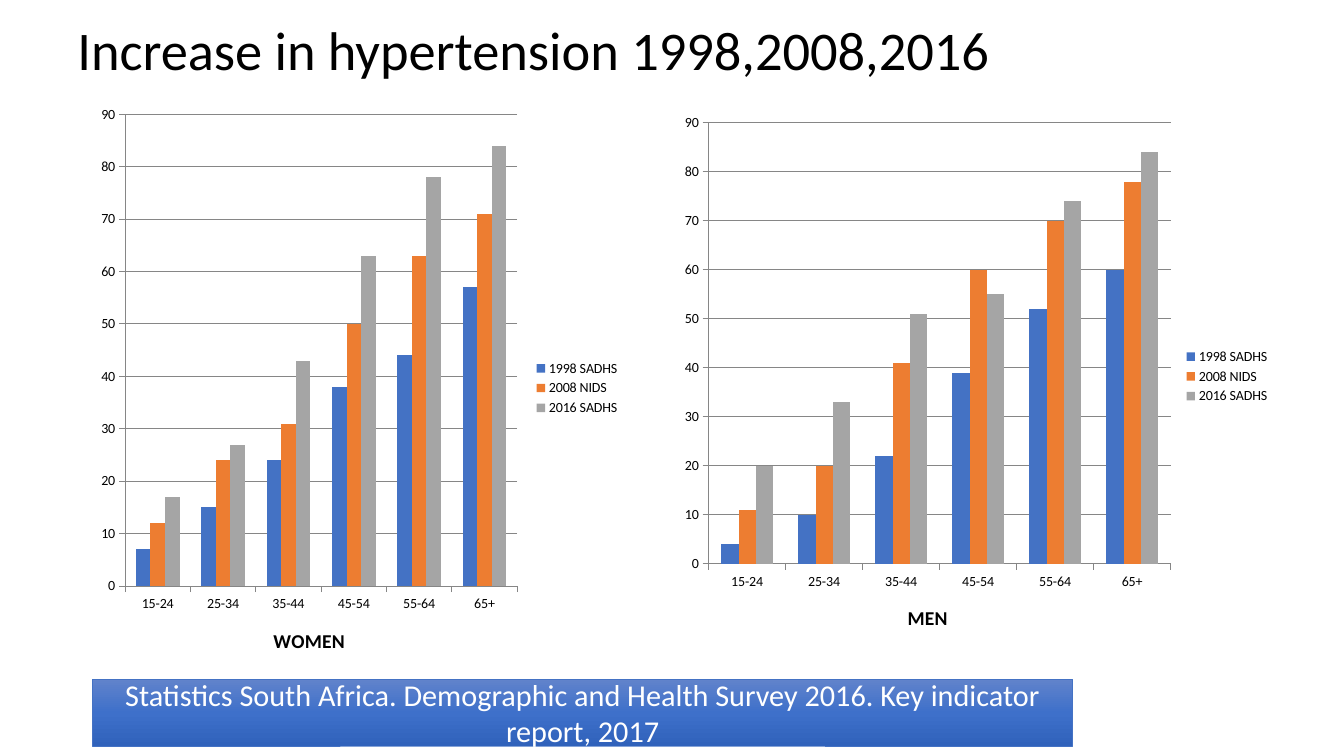
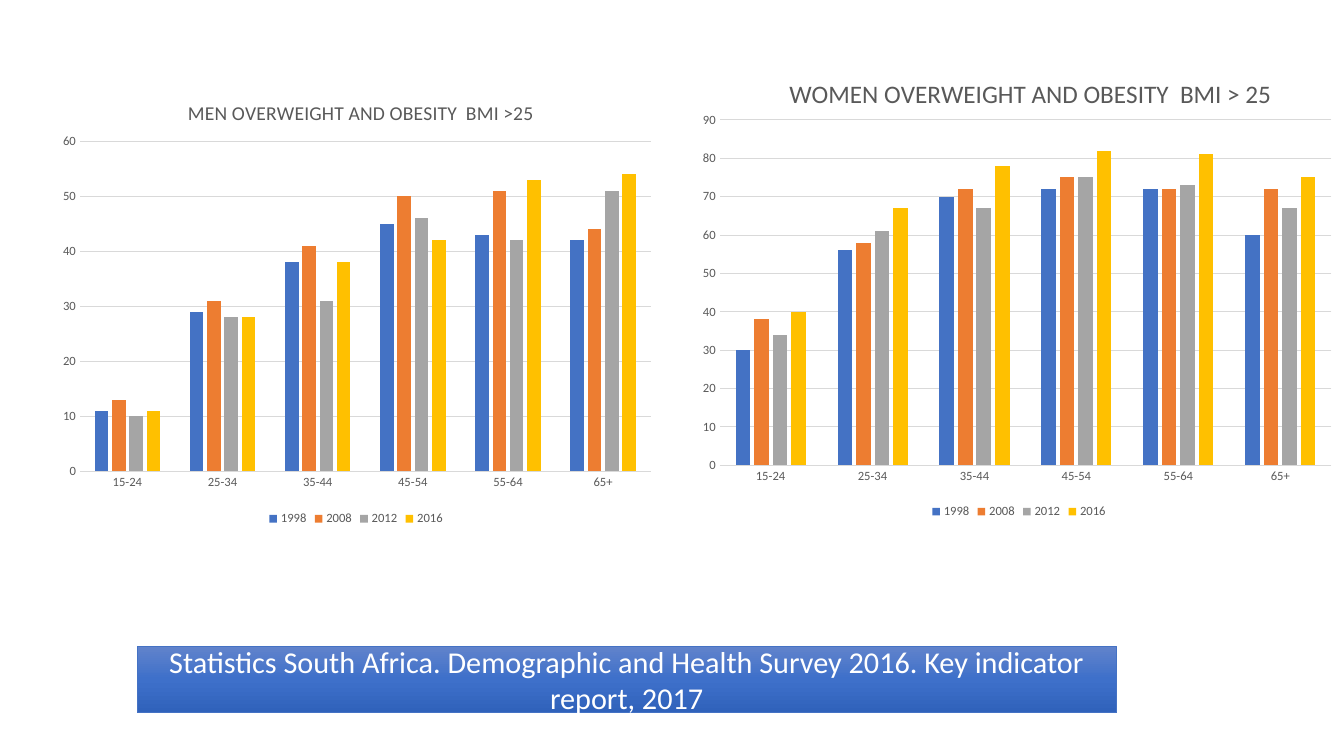
import copy

import pptx
import pptx.chart.data
import pptx.dml.color
import pptx.enum.chart
import pptx.enum.shapes
import pptx.enum.text
import pptx.oxml
import pptx.oxml.ns
import pptx.util
from pptx.util import Cm

FONT = "Calibri"
SERIES_COLOURS = ["4472C4", "ED7D31", "A5A5A5", "FFC000"]
BANNER_STOPS = [(0, "6183CB"), (0.5, "3E70CA"), (1, "3062BB")]
BANNER_SIZE = (24.69, 1.68)
AGE_GROUPS = ["15-24", "25-34", "35-44", "45-54", "55-64", "65+"]
SOURCE = ("Statistics South Africa. Demographic and Health Survey 2016. "
          "Key indicator report, 2017")
TICK = pptx.enum.chart.XL_TICK_MARK
LEGEND = pptx.enum.chart.XL_LEGEND_POSITION

HYPERTENSION_STYLE = {
    "names": ["1998 SADHS", "2008 NIDS", "2016 SADHS"],
    "size": 10, "text": "000000", "line": "868686", "tick": TICK.OUTSIDE,
    "legend": LEGEND.RIGHT, "gap": 150, "overlap": 0, "value_line": True,
}
OBESITY_STYLE = {
    "names": ["1998", "2008", "2012", "2016"],
    "size": 9, "text": "595959", "line": "D9D9D9", "tick": TICK.NONE,
    "legend": LEGEND.BOTTOM, "gap": 219, "overlap": -27, "value_line": False,
}

# Boxes are left, top, width, height in cm; plot and title places are
# fractions of the chart.
SLIDES = [
    {
        "title": "Increase in hypertension 1998,2008,2016",
        "banner_at": (2.34, 17.12),
        "style": HYPERTENSION_STYLE,
        "charts": [
            {"box": (2.34, 2.44, 13.54, 14.68), "axis_title": "WOMEN", "top": 90,
             "plot": {"x": 0.06, "y": 0.03, "w": 0.73, "h": 0.81},
             "values": [[7, 15, 24, 38, 44, 57],
                        [12, 24, 31, 50, 63, 71],
                        [17, 27, 43, 63, 78, 84]]},
            {"box": (16.94, 2.54, 15.32, 13.89), "axis_title": "MEN", "top": 90,
             "plot": {"x": 0.06, "y": 0.04, "w": 0.76, "h": 0.8},
             "values": [[4, 10, 22, 39, 52, 60],
                        [11, 20, 41, 60, 70, 78],
                        [20, 33, 51, 55, 74, 84]]},
        ],
    },
    {
        "banner_at": (3.45, 16.28),
        "style": OBESITY_STYLE,
        "charts": [
            {"box": (1.24, 1.96, 15.47, 11.4), "top": 60,
             "title": "MEN OVERWEIGHT AND OBESITY  BMI >25", "title_size": 14,
             "title_at": {"x": 0.22, "y": 0.04},
             "plot": {"x": 0.05, "y": 0.14, "w": 0.93, "h": 0.73},
             "values": [[11, 29, 38, 45, 43, 42],
                        [13, 31, 41, 50, 51, 44],
                        [10, 28, 31, 46, 42, 51],
                        [11, 28, 38, 42, 53, 54]]},
            {"box": (17.48, 1.09, 16.4, 12.09), "top": 90,
             "title": "WOMEN OVERWEIGHT AND OBESITY  BMI > 25", "title_size": 18,
             "title_at": {"x": 0.14, "y": 0.06},
             "plot": {"x": 0.04, "y": 0.16, "w": 0.94, "h": 0.72},
             "values": [[30, 56, 70, 72, 72, 60],
                        [38, 58, 72, 75, 72, 72],
                        [34, 61, 67, 75, 73, 67],
                        [40, 67, 78, 82, 81, 75]]},
        ],
    },
]


def colour(hex_text):
    return pptx.dml.color.RGBColor.from_string(hex_text)


def set_layout(element, index, place):
    """Give a chart title or plot area a fixed place inside its chart."""
    for old in element.findall(pptx.oxml.ns.qn("c:layout")):
        element.remove(old)
    target = '<c:layoutTarget val="inner"/>' if "w" in place else ""
    modes = "".join(f'<c:{key}Mode val="edge"/>' for key in place if key in "xy")
    values = "".join(f'<c:{key} val="{value}"/>' for key, value in place.items())
    element.insert(index, pptx.oxml.parse_xml(
        f'<c:layout {pptx.oxml.ns.nsdecls("c")}><c:manualLayout>'
        f"{target}{modes}{values}</c:manualLayout></c:layout>"))


deck = pptx.Presentation()
deck.slide_width = Cm(33.87)
deck.slide_height = Cm(19.05)

for content in SLIDES:
    slide = deck.slides.add_slide(deck.slide_layouts[6])
    style = content["style"]

    if "title" in content:
        title_box = slide.shapes.add_textbox(Cm(1.7), Cm(0.76), Cm(30.48), Cm(1.17))
        title_frame = title_box.text_frame
        title_frame.word_wrap = True
        title_frame.vertical_anchor = pptx.enum.text.MSO_ANCHOR.MIDDLE
        para = title_frame.paragraphs[0]
        para.text = content["title"]
        para.line_spacing = 0.9
        para.font.name = FONT
        para.font.size = pptx.util.Pt(38.9)
        para.font.color.rgb = colour("000000")

    for details in content["charts"]:
        data = pptx.chart.data.CategoryChartData()
        data.categories = AGE_GROUPS
        for name, values in zip(style["names"], details["values"]):
            data.add_series(name, values)
        chart = slide.shapes.add_chart(
            pptx.enum.chart.XL_CHART_TYPE.COLUMN_CLUSTERED,
            *[Cm(length) for length in details["box"]], data).chart
        chart.font.name = FONT
        chart.font.size = pptx.util.Pt(style["size"])
        chart.font.color.rgb = colour(style["text"])

        plot = chart.plots[0]
        plot.vary_by_categories = False
        plot.gap_width = style["gap"]
        plot.overlap = style["overlap"]
        for series, series_colour in zip(plot.series, SERIES_COLOURS):
            series.format.fill.solid()
            series.format.fill.fore_color.rgb = colour(series_colour)

        ages, percent = chart.category_axis, chart.value_axis
        percent.minimum_scale = 0
        percent.maximum_scale = details["top"]
        percent.major_unit = 10
        percent.has_major_gridlines = True
        for axis in (ages, percent):
            axis.major_tick_mark = style["tick"]
            axis.minor_tick_mark = TICK.NONE
        for line in (ages.format.line, percent.format.line,
                     percent.major_gridlines.format.line):
            line.width = pptx.util.Pt(0.75)
            line.color.rgb = colour(style["line"])
        if not style["value_line"]:
            percent.format.line.fill.background()

        chart.has_legend = True
        chart.legend.position = style["legend"]
        chart.legend.include_in_layout = False

        if "title" in details:
            chart.has_title = True
            heading = chart.chart_title
            heading_text, size, bold = details["title"], details["title_size"], False
        else:
            chart.has_title = False
            heading = ages.axis_title
            heading_text, size, bold = details["axis_title"], 14, True
        para = heading.text_frame.paragraphs[0]
        para.text = heading_text
        para.font.name = FONT
        para.font.size = pptx.util.Pt(size)
        para.font.bold = bold
        para.font.color.rgb = colour(style["text"])

        chart_element = chart.element.find(pptx.oxml.ns.qn("c:chart"))
        set_layout(chart_element.find(pptx.oxml.ns.qn("c:plotArea")), 0, details["plot"])
        if "title_at" in details:
            set_layout(chart_element.find(pptx.oxml.ns.qn("c:title")), 1,
                       details["title_at"])

    banner = slide.shapes.add_shape(
        pptx.enum.shapes.MSO_SHAPE.RECTANGLE,
        *[Cm(length) for length in content["banner_at"] + BANNER_SIZE])
    banner.shadow.inherit = False
    banner.line.color.rgb = colour("4472C4")
    banner.line.width = pptx.util.Pt(0.5)
    banner.fill.gradient()
    banner.fill.gradient_angle = 270
    stop_list = banner.element.spPr.find(
        pptx.oxml.ns.qn("a:gradFill")).find(pptx.oxml.ns.qn("a:gsLst"))
    stop_list.insert(1, copy.deepcopy(stop_list[0]))
    for stop, (position, stop_colour) in zip(banner.fill.gradient_stops, BANNER_STOPS):
        stop.position = position
        stop.color.rgb = colour(stop_colour)
    banner.text_frame.word_wrap = True
    banner.text_frame.vertical_anchor = pptx.enum.text.MSO_ANCHOR.MIDDLE
    para = banner.text_frame.paragraphs[0]
    para.text = SOURCE
    para.alignment = pptx.enum.text.PP_ALIGN.CENTER
    para.font.name = FONT
    para.font.size = pptx.util.Pt(21.6)
    para.font.color.rgb = colour("FFFFFF")

deck.save("out.pptx")
